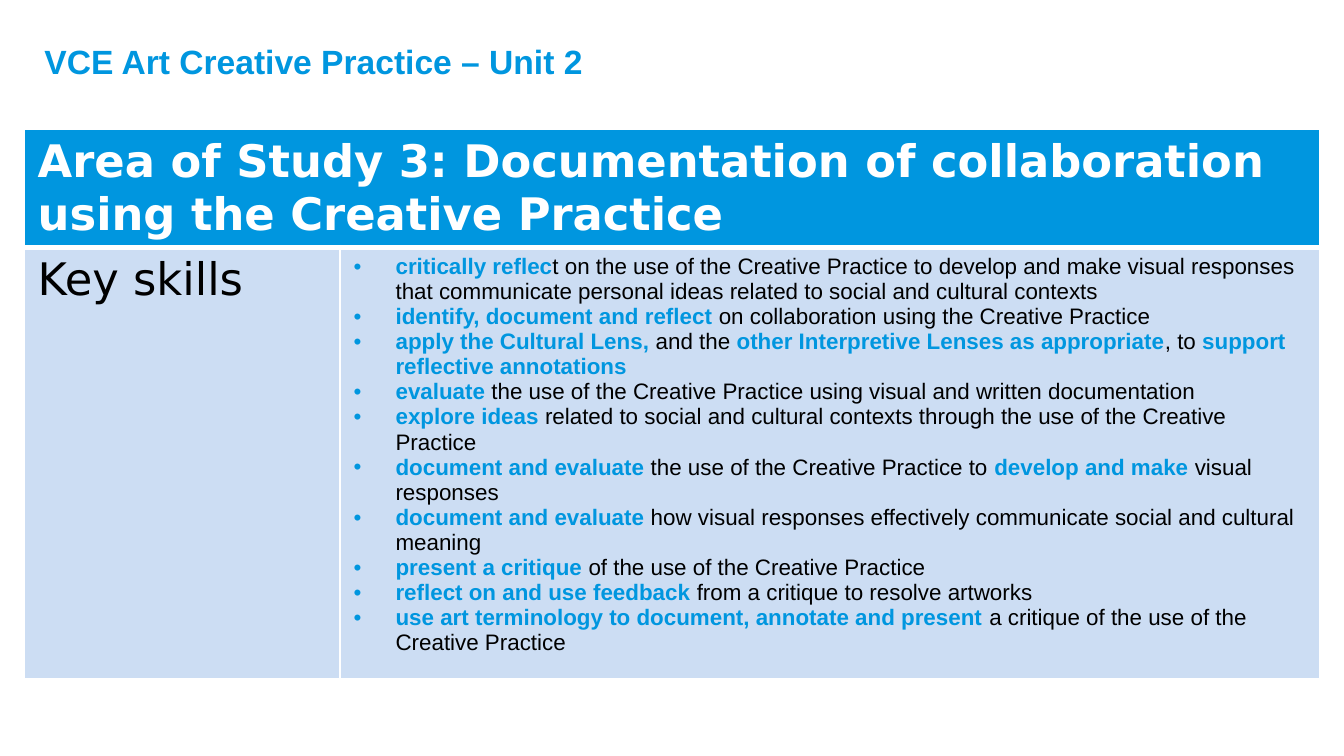
from dataclasses import dataclass

from lxml.etree import SubElement
from pptx import Presentation
from pptx.dml.color import RGBColor
from pptx.enum.text import MSO_ANCHOR, PP_ALIGN
from pptx.oxml.ns import qn
from pptx.util import Pt

BLUE = RGBColor(0x00, 0x96, 0xDF)
PALE_BLUE = RGBColor(0xCC, 0xDD, 0xF3)
WHITE = RGBColor(0xFF, 0xFF, 0xFF)
BLACK = RGBColor(0x00, 0x00, 0x00)

HEADING_FONT = "DejaVu Sans"
BODY_FONT = "Arial"
BULLET_INDENT = Pt(22.5)
COLUMN_WIDTHS = (Pt(169.2), Pt(524.9))
ROW_HEIGHTS = (Pt(62), Pt(231.1))


@dataclass(frozen=True)
class TextStyle:
    font: str
    size: float
    color: RGBColor
    bold: bool


TITLE = TextStyle(BODY_FONT, 18, BLUE, True)
HEADING = TextStyle(HEADING_FONT, 24, WHITE, True)
LABEL = TextStyle(HEADING_FONT, 24, BLACK, False)
EMPHASIS = TextStyle(BODY_FONT, 12, BLUE, True)
PLAIN = TextStyle(BODY_FONT, 12, BLACK, False)


@dataclass(frozen=True)
class Skill:
    emphasis: str
    plain: str
    second_emphasis: str = ""
    second_plain: str = ""
    third_emphasis: str = ""

    def segments(self) -> list:
        pairs = (
            (self.emphasis, EMPHASIS),
            (self.plain, PLAIN),
            (self.second_emphasis, EMPHASIS),
            (self.second_plain, PLAIN),
            (self.third_emphasis, EMPHASIS),
        )
        return [pair for pair in pairs if pair[0]]


SKILLS = (
    Skill("critically reflec",
          "t on the use of the Creative Practice to develop and make visual responses "
          "that communicate personal ideas related to social and cultural contexts"),
    Skill("identify, document and reflect ", "on collaboration using the Creative Practice"),
    Skill("apply the Cultural Lens, ", "and the ",
          "other Interpretive Lenses as appropriate", ", to ",
          "support reflective annotations"),
    Skill("evaluate ", "the use of the Creative Practice using visual and written documentation"),
    Skill("explore ideas ",
          "related to social and cultural contexts through the use of the Creative Practice"),
    Skill("document and evaluate ", "the use of the Creative Practice to ",
          "develop and make ", "visual responses"),
    Skill("document and evaluate ",
          "how visual responses effectively communicate social and cultural meaning"),
    Skill("present a critique ", "of the use of the Creative Practice"),
    Skill("reflect on and use feedback ", "from a critique to resolve artworks"),
    Skill("use art terminology to document, annotate and present ",
          "a critique of the use of the Creative Practice"),
)


def format_run(run, style: TextStyle) -> None:
    run.font.name = style.font
    run.font.size = Pt(style.size)
    run.font.bold = style.bold
    run.font.color.rgb = style.color


def write_text(text_frame, text: str, style: TextStyle) -> None:
    text_frame.text = text
    format_run(text_frame.paragraphs[0].runs[0], style)


def write_skill(paragraph, skill: Skill) -> None:
    properties = paragraph._p.get_or_add_pPr()
    properties.set("marL", str(BULLET_INDENT))
    properties.set("indent", str(-BULLET_INDENT))
    SubElement(properties, qn("a:buFont"), typeface=BODY_FONT)
    SubElement(properties, qn("a:buChar"), char="•")
    for text, style in skill.segments():
        run = paragraph.add_run()
        run.text = text
        format_run(run, style)


def format_cell(cell, fill: RGBColor, top: float, bottom: float) -> None:
    properties = cell._tc.get_or_add_tcPr()
    for side, width in (("L", 1), ("R", 1), ("T", top), ("B", bottom)):
        border = SubElement(properties, qn(f"a:ln{side}"), w=str(Pt(width)))
        border_fill = SubElement(border, qn("a:solidFill"))
        SubElement(border_fill, qn("a:srgbClr"), val=str(WHITE))
    cell.fill.solid()
    cell.fill.fore_color.rgb = fill


def add_title(slide) -> None:
    title = slide.shapes.title
    title.left, title.top, title.width, title.height = Pt(16.6), Pt(18), Pt(663), Pt(29)
    write_text(title.text_frame, "VCE Art Creative Practice – Unit 2", TITLE)
    title.text_frame.vertical_anchor = MSO_ANCHOR.MIDDLE
    title.text_frame.paragraphs[0].alignment = PP_ALIGN.LEFT


def add_skills_table(slide) -> None:
    table = slide.shapes.add_table(
        2, 2, Pt(13), Pt(69.4), sum(COLUMN_WIDTHS), sum(ROW_HEIGHTS)
    ).table
    for column, width in zip(table.columns, COLUMN_WIDTHS):
        column.width = width
    for row, height in zip(table.rows, ROW_HEIGHTS):
        row.height = height
    for index in range(2):
        format_cell(table.cell(0, index), BLUE, 1, 3)
        format_cell(table.cell(1, index), PALE_BLUE, 3, 1)

    heading = table.cell(0, 0)
    heading.merge(table.cell(0, 1))
    write_text(
        heading.text_frame,
        "Area of Study 3: Documentation of collaboration using the Creative Practice",
        HEADING,
    )
    write_text(table.cell(1, 0).text_frame, "Key skills", LABEL)

    skills_frame = table.cell(1, 1).text_frame
    for index, skill in enumerate(SKILLS):
        paragraph = skills_frame.add_paragraph() if index else skills_frame.paragraphs[0]
        write_skill(paragraph, skill)


def main() -> None:
    presentation = Presentation()
    presentation.slide_width = Pt(720)
    presentation.slide_height = Pt(405)
    slide = presentation.slides.add_slide(presentation.slide_layouts.get_by_name("Title Only"))
    add_skills_table(slide)
    add_title(slide)
    presentation.save("out.pptx")


if __name__ == "__main__":
    main()
